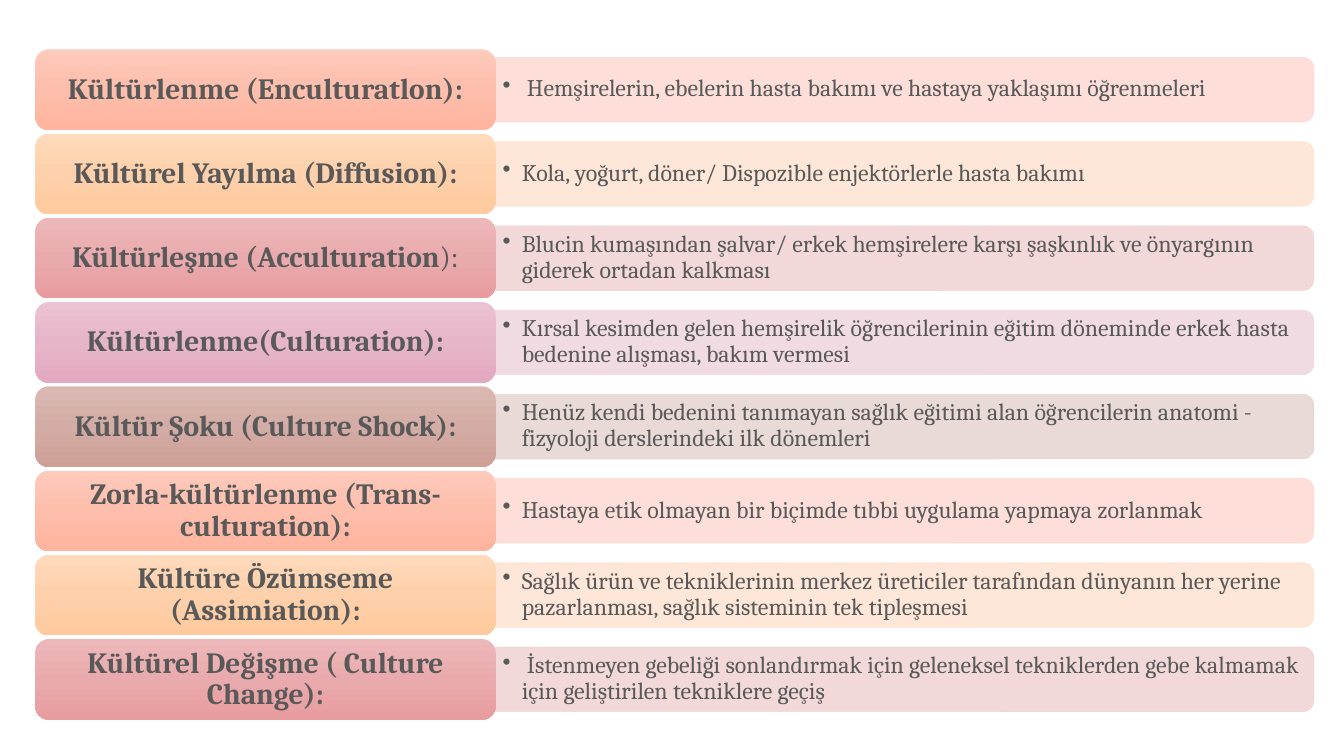
from lxml import etree
from copy import deepcopy
from pptx import Presentation, util as u
from pptx.dml.color import RGBColor
from pptx.enum import shapes as s, text as t
from pptx.oxml.ns import qn

WIDE, HIGH = 13.33, 7.5
TONES = [
    ("FDDBD4", ("FECABB", "FDBEAC", "FFB49D")),
    ("FEE4D4", ("FFDABB", "FED0AB", "FFCA9D")),
    ("F1D4D5", ("EDB8BA", "E9AAAD", "E89C9E")),
    ("F0D8E1", ("EBC2D2", "E6B5C8", "E4A8C1")),
    ("E7D5D3", ("DAB9B2", "D3ACA5", "CF9F96")),
]
TERMS = [
    ("Kültürlenme (Enculturatlon):", "",
     " Hemşirelerin, ebelerin hasta bakımı ve hastaya yaklaşımı öğrenmeleri"),
    ("Kültürel Yayılma (Diffusion):", "",
     "Kola, yoğurt, döner/ Dispozible enjektörlerle hasta bakımı"),
    ("Kültürleşme (Acculturation", "):",
     "Blucin kumaşından şalvar/ erkek hemşirelere karşı şaşkınlık ve önyargının "
     "giderek ortadan kalkması"),
    ("Kültürlenme(Culturation):", "",
     "Kırsal kesimden gelen hemşirelik öğrencilerinin eğitim döneminde erkek hasta "
     "bedenine alışması, bakım vermesi"),
    ("Kültür Şoku (Culture Shock):", "",
     "Henüz kendi bedenini tanımayan sağlık eğitimi alan öğrencilerin anatomi - "
     "fizyoloji derslerindeki ilk dönemleri"),
    ("Zorla-kültürlenme (Trans-culturation):", "",
     "Hastaya etik olmayan bir biçimde tıbbi uygulama yapmaya zorlanmak"),
    ("Kültüre Özümseme (Assimiation):", "",
     "Sağlık ürün ve tekniklerinin merkez üreticiler tarafından dünyanın her yerine "
     "pazarlanması, sağlık sisteminin tek tipleşmesi"),
    ("Kültürel Değişme ( Culture Change):", "",
     " İstenmeyen gebeliği sonlandırmak için geleneksel tekniklerden gebe kalmamak "
     "için geliştirilen tekniklere geçiş"),
]
LABEL = {"size": 21, "side": 0.09, "after": 35, "align": t.PP_ALIGN.CENTER}
NOTE = {"size": 17, "side": 0.07, "after": 15, "align": t.PP_ALIGN.LEFT, "bullet": "•"}


def tint(code):
    """Turn a hex string into a colour."""
    return RGBColor.from_string(code)


def put(obj, vals):
    """Set each attribute named in a dict."""
    for key, val in vals.items():
        setattr(obj, key, val)


def block(slide, kind, box):
    """Add a preset shape with no shadow."""
    shape = slide.shapes.add_shape(kind, *map(u.Inches, box))
    shape.shadow.inherit = False
    return shape


def words(slide, box, runs, style):
    """Write one centred-height paragraph of (text, bold) runs."""
    frame = slide.shapes.add_textbox(*map(u.Inches, box)).text_frame
    side, edge = u.Inches(style["side"]), u.Inches(0.04)
    put(frame, {"word_wrap": True, "vertical_anchor": t.MSO_ANCHOR.MIDDLE,
                "margin_left": side, "margin_right": side,
                "margin_top": edge, "margin_bottom": edge})
    para = frame.paragraphs[0]
    put(para, {"alignment": style["align"], "line_spacing": 0.9})
    props = para._p.get_or_add_pPr()
    after = etree.SubElement(props, qn("a:spcAft"))
    etree.SubElement(after, qn("a:spcPct")).set("val", str(style["after"] * 1000))
    if "bullet" in style:
        para.level = 1
        props.set("marL", str(u.Inches(0.19)))
        props.set("indent", str(-u.Inches(0.19)))
        etree.SubElement(props, qn("a:buChar")).set("char", style["bullet"])
    for part, bold in runs:
        run = para.add_run()
        run.text = part
        put(run.font, {"name": "Cambria", "size": u.Pt(style["size"]), "bold": bold})
        run.font.color.rgb = tint("595959")


def bar(slide, box, tone, note):
    """Draw the pale bar, rounded at its right end, and its note."""
    x, y, w, h = box
    shape = block(slide, s.MSO_SHAPE.ROUND_2_SAME_RECTANGLE,
                  (x + (w - h) / 2, y + (h - w) / 2, h, w))
    shape.rotation = 90
    shape.line.width = u.Pt(0.5)
    for fill in (shape.fill, shape.line.fill):
        fill.solid()
        fill.fore_color.rgb = tint(tone)
    for clr in shape._element.spPr.iter(qn("a:srgbClr")):
        etree.SubElement(clr, qn("a:alpha")).set("val", "90000")
    words(slide, (x, y + 0.03, w - 0.03, h - 0.07), [(note, False)], NOTE)


def label(slide, box, tones, runs):
    """Draw the shaded label and its term."""
    x, y, w, h = box
    shape = block(slide, s.MSO_SHAPE.ROUNDED_RECTANGLE, box)
    shape.line.fill.background()
    shape.fill.gradient()
    shape.fill.gradient_angle = 270
    stops = next(shape._element.spPr.iter(qn("a:gsLst")))
    stops.insert(1, deepcopy(stops[0]))
    for i, (stop, tone) in enumerate(zip(shape.fill.gradient_stops, tones)):
        stop.position = i / 2
        stop.color.rgb = tint(tone)
    words(slide, (x + 0.04, y + 0.04, w - 0.08, h - 0.08), runs, LABEL)


def terms(slide, box):
    """Stack the rows of labels and bars in a box."""
    x, y, w, h = box
    high = 0.8
    step = (h - high) / (len(TERMS) - 1)
    left = w * 0.36
    for i, (term, tail, note) in enumerate(TERMS):
        pale, tones = TONES[i % len(TONES)]
        top = y + i * step
        bar(slide, (x + left, top + high * 0.1, w - left, high * 0.8), pale, note)
        runs = [(term, True)] + ([(tail, False)] if tail else [])
        label(slide, (x, top, left, high), tones, runs)


def main():
    """Build and save the slide."""
    deck = Presentation()
    put(deck, {"slide_width": u.Inches(WIDE), "slide_height": u.Inches(HIGH)})
    slide = deck.slides.add_slide(deck.slide_layouts[6])
    terms(slide, (0.35, 0.49, 12.68, 6.65))
    deck.save("out.pptx")


if __name__ == "__main__":
    main()
